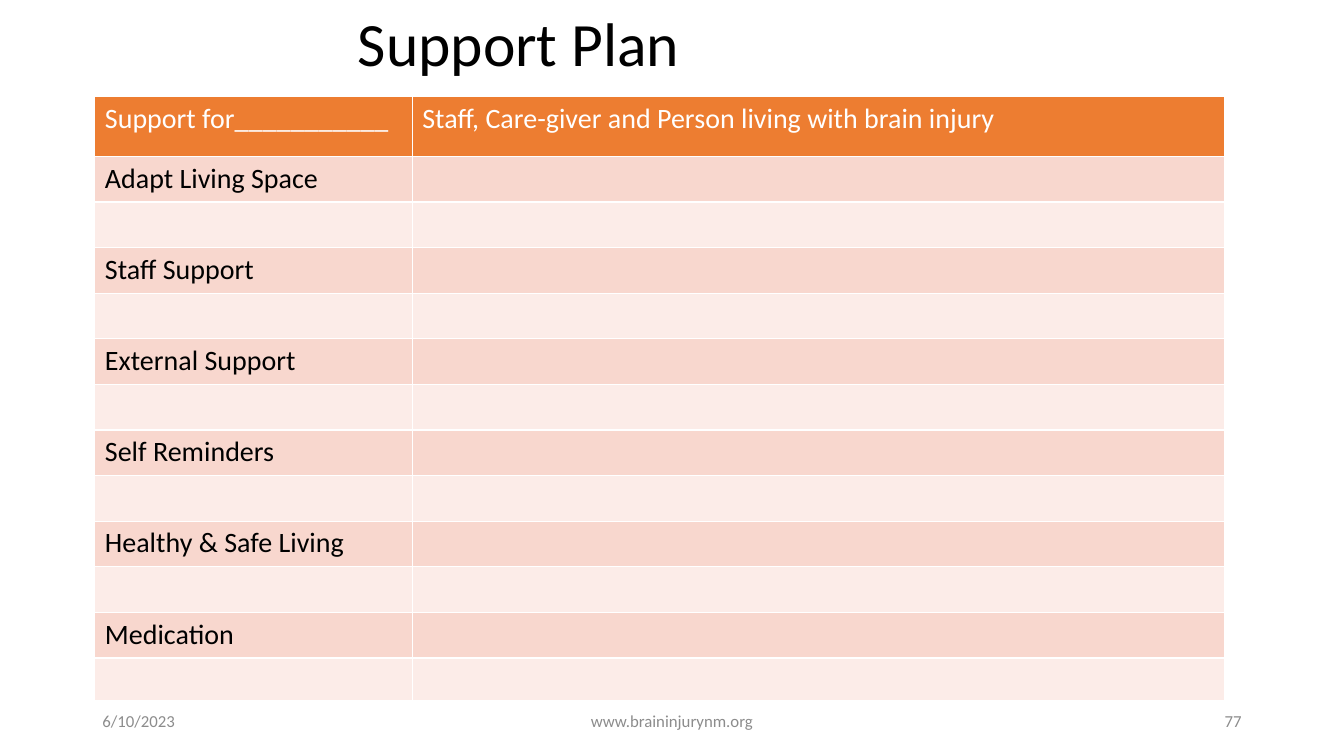
from pptx import Presentation
from pptx.dml.color import RGBColor
from pptx.enum.text import MSO_ANCHOR, PP_ALIGN
from pptx.util import Cm, Pt

TITLE = {"name": "Calibri", "size": Pt(44), "bold": False}
CELL = {"name": "Calibri", "size": Pt(20), "bold": False}
FOOTER = {"name": "Calibri", "size": Pt(12), "bold": False}

HEADINGS = ("Support for___________",
            "Staff, Care-giver and Person living with brain injury")
SUPPORTS = ("Adapt Living Space", "Staff Support", "External Support",
            "Self Reminders", "Healthy & Safe Living", "Medication")
BANDS = ("F8D7CE", "FCECE8")


def color(hex_value):
    return RGBColor.from_string(hex_value)


def write(tf, text, fmt, hex_value, align=PP_ALIGN.LEFT):
    p = tf.paragraphs[0]
    p.alignment = align
    r = p.add_run()
    r.text = text
    for name, value in fmt.items():
        setattr(r.font, name, value)
    r.font.color.rgb = color(hex_value)


def add_title(slide, left, top, width, height):
    sp = slide.shapes.title
    sp.left, sp.top, sp.width, sp.height = left, top, width, height
    tf = sp.text_frame
    tf.vertical_anchor = MSO_ANCHOR.MIDDLE
    write(tf, "Support Plan", TITLE, "000000", PP_ALIGN.CENTER)
    tf.paragraphs[0].line_spacing = 0.9


def add_plan_table(slide, left, top, width, height):
    """Header row, then each support followed by an empty row to fill in."""
    n_rows = 1 + 2 * len(SUPPORTS)
    table = slide.shapes.add_table(n_rows, 2, left, top, width, height).table
    table.columns[0].width = Cm(8)
    table.columns[1].width = width - Cm(8)

    header, band = Cm(1.5), Cm(1.15)
    last = height - header - band * (n_rows - 2)
    heights = [header] + [band] * (n_rows - 2) + [last]
    for i, row in enumerate(table.rows):
        row.height = heights[i]
        for cell in row.cells:
            cell.fill.solid()
            cell.fill.fore_color.rgb = color(BANDS[(i - 1) % 2] if i else "ED7D31")

    for j, heading in enumerate(HEADINGS):
        write(table.cell(0, j).text_frame, heading, CELL, "FFFFFF")
    for i, support in enumerate(SUPPORTS):
        write(table.cell(1 + 2 * i, 0).text_frame, support, CELL, "000000")


def add_footer(slide, left, top, width, height):
    """Date at the left, web address in the middle, slide number at the right."""
    side, middle = Cm(7.62), Cm(11.43)
    parts = (
        ("6/10/2023", left, side, PP_ALIGN.LEFT),
        ("www.braininjurynm.org", left + (width - middle) // 2, middle, PP_ALIGN.CENTER),
        ("77", left + width - side, side, PP_ALIGN.RIGHT),
    )
    for text, x, w, align in parts:
        tf = slide.shapes.add_textbox(x, top, w, height).text_frame
        tf.word_wrap = True
        tf.vertical_anchor = MSO_ANCHOR.MIDDLE
        write(tf, text, FOOTER, "8C8C8C", align)


def main():
    prs = Presentation()
    prs.slide_width, prs.slide_height = Cm(33.87), Cm(19.05)
    slide = prs.slides.add_slide(prs.slide_layouts[5])
    add_title(slide, Cm(5.44), Cm(0.18), Cm(15.27), Cm(1.98))
    add_plan_table(slide, Cm(2.39), Cm(2.44), Cm(28.47), Cm(15.22))
    add_footer(slide, Cm(2.33), Cm(17.65), Cm(29.21), Cm(1.01))
    prs.save("out.pptx")


if __name__ == "__main__":
    main()
